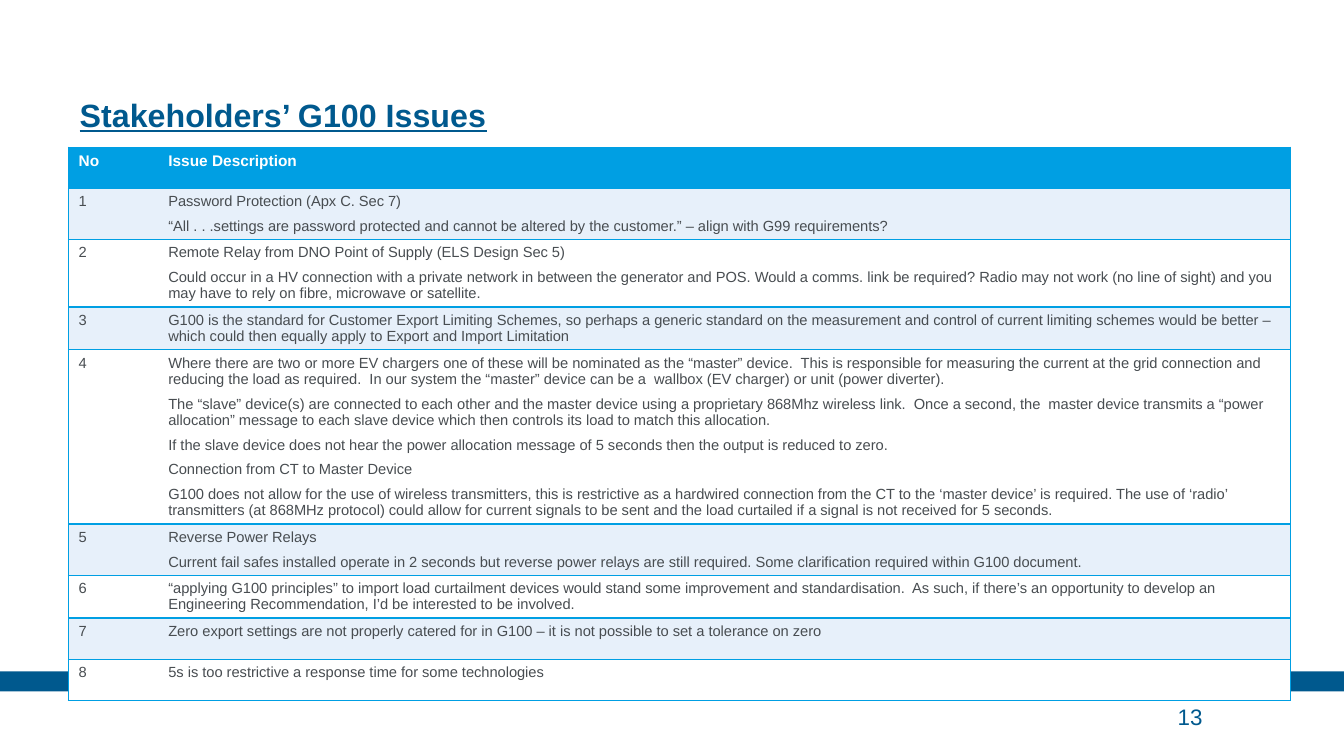
from lxml import etree
from pptx import Presentation
from pptx import util as u
from pptx.dml.color import RGBColor
from pptx.enum import shapes, text
from pptx.oxml import ns

NAVY, SKY, PALE, WHITE, GREY = "00598E", "009FE3", "E7F0FA", "FFFFFF", "484D51"

ISSUES = [
    ["Password Protection (Apx C. Sec 7)",
     "“All . . .settings are password protected and cannot be altered by the customer.” – align with G99 requirements?"],
    ["Remote Relay from DNO Point of Supply (ELS Design Sec 5)",
     "Could occur in a HV connection with a private network in between the generator and POS. Would a comms. link be "
     "required? Radio may not work (no line of sight) and you may have to rely on fibre, microwave or satellite."],
    ["G100 is the standard for Customer Export Limiting Schemes, so perhaps a generic standard on the measurement and "
     "control of current limiting schemes would be better – which could then equally apply to Export and Import "
     "Limitation"],
    ["Where there are two or more EV chargers one of these will be nominated as the “master” device.  This is "
     "responsible for measuring the current at the grid connection and reducing the load as required.  In our system "
     "the “master” device can be a  wallbox (EV charger) or unit (power diverter).",
     "The “slave” device(s) are connected to each other and the master device using a proprietary 868Mhz wireless "
     "link.  Once a second, the  master device transmits a “power allocation” message to each slave device which then "
     "controls its load to match this allocation.",
     "If the slave device does not hear the power allocation message of 5 seconds then the output is reduced to zero.",
     "Connection from CT to Master Device",
     "G100 does not allow for the use of wireless transmitters, this is restrictive as a hardwired connection from the "
     "CT to the ‘master device’ is required. The use of ‘radio’ transmitters (at 868MHz protocol) could allow for "
     "current signals to be sent and the load curtailed if a signal is not received for 5 seconds."],
    ["Reverse Power Relays",
     "Current fail safes installed operate in 2 seconds but reverse power relays are still required. Some "
     "clarification required within G100 document."],
    ["“applying G100 principles” to import load curtailment devices would stand some improvement and standardisation.  "
     "As such, if there’s an opportunity to develop an Engineering Recommendation, I’d be interested to be involved."],
    ["Zero export settings are not properly catered for in G100 – it is not possible to set a tolerance on zero"],
    ["5s is too restrictive a response time for some technologies"],
]


def colour(value):
    return RGBColor.from_string(value)


def inches(box):
    return [u.Inches(length) for length in box]


def write_text(frame, paragraphs, size, color, bold=False, underline=False, after=0, line=None):
    frame.word_wrap = True
    for index, content in enumerate(paragraphs):
        paragraph = frame.paragraphs[0] if index == 0 else frame.add_paragraph()
        paragraph.alignment = text.PP_ALIGN.LEFT
        paragraph.space_after = u.Pt(after)
        if line:
            paragraph.line_spacing = u.Pt(line)
        run = paragraph.add_run()
        run.text = content
        font = run.font
        font.name, font.size = "Arial", u.Pt(size)
        font.bold, font.underline = bold, underline
        font.color.rgb = colour(color)


def place_frame(frame, anchor):
    frame.margin_left = frame.margin_right = frame.margin_top = frame.margin_bottom = 0
    frame.auto_size = text.MSO_AUTO_SIZE.NONE
    frame.vertical_anchor = anchor


def set_borders(cell, hidden_side):
    properties = cell._tc.get_or_add_tcPr()
    for side in "LRTB":
        edge = etree.SubElement(properties, ns.qn(f"a:ln{side}"), w=str(u.Pt(1)))
        if side == hidden_side:
            etree.SubElement(edge, ns.qn("a:noFill"))
        else:
            fill = etree.SubElement(edge, ns.qn("a:solidFill"))
            etree.SubElement(fill, ns.qn("a:srgbClr"), val=SKY)


def add_footer_band(slide, box):
    band = slide.shapes.add_shape(shapes.MSO_SHAPE.RECTANGLE, *inches(box))
    band.shadow.inherit = False
    band.fill.solid()
    band.fill.fore_color.rgb = colour(NAVY)
    band.line.fill.background()


def add_heading(slide, box):
    title = slide.shapes.title
    title.left, title.top, title.width, title.height = inches(box)
    place_frame(title.text_frame, text.MSO_ANCHOR.BOTTOM)
    write_text(title.text_frame, ["Stakeholders’ G100 Issues"], size=23, color=NAVY,
               bold=True, underline=True, line=30)


def add_issue_table(slide, box):
    rows = [("No", ["Issue Description"])]
    rows += [(str(number), issue) for number, issue in enumerate(ISSUES, 1)]
    table = slide.shapes.add_table(len(rows), 2, *inches(box)).table
    table.horz_banding = False
    number_width = u.Inches(0.89)
    table.columns[0].width = number_width
    table.columns[1].width = u.Inches(box[2]) - number_width

    for index, (number, description) in enumerate(rows):
        table.rows[index].height = u.Inches(0.41)
        header = index == 0
        shade = SKY if header else PALE if index % 2 else WHITE
        style = dict(size=11, color=WHITE, bold=True) if header else dict(size=10.5, color=GREY)
        columns = [([number], "R", 0), (description, "L", 0 if header else 6)]
        for column, (paragraphs, hidden_side, after) in enumerate(columns):
            cell = table.cell(index, column)
            set_borders(cell, hidden_side)
            cell.fill.solid()
            cell.fill.fore_color.rgb = colour(shade)
            write_text(cell.text_frame, paragraphs, after=after, **style)


def add_page_number(slide, box):
    frame = slide.shapes.add_textbox(*inches(box)).text_frame
    place_frame(frame, text.MSO_ANCHOR.MIDDLE)
    write_text(frame, ["13"], size=16, color=NAVY)


def main():
    deck = Presentation()
    deck.slide_width, deck.slide_height = u.Inches(13.33), u.Inches(7.5)
    slide = deck.slides.add_slide(deck.slide_layouts[5])
    add_footer_band(slide, (0, 6.66, 13.33, 0.2))
    add_heading(slide, (0.79, 0.31, 9.84, 1.02))
    add_issue_table(slide, (0.68, 1.46, 12.12, 3.69))
    add_page_number(slide, (11.68, 6.91, 1.23, 0.39))
    deck.save("out.pptx")


if __name__ == "__main__":
    main()
